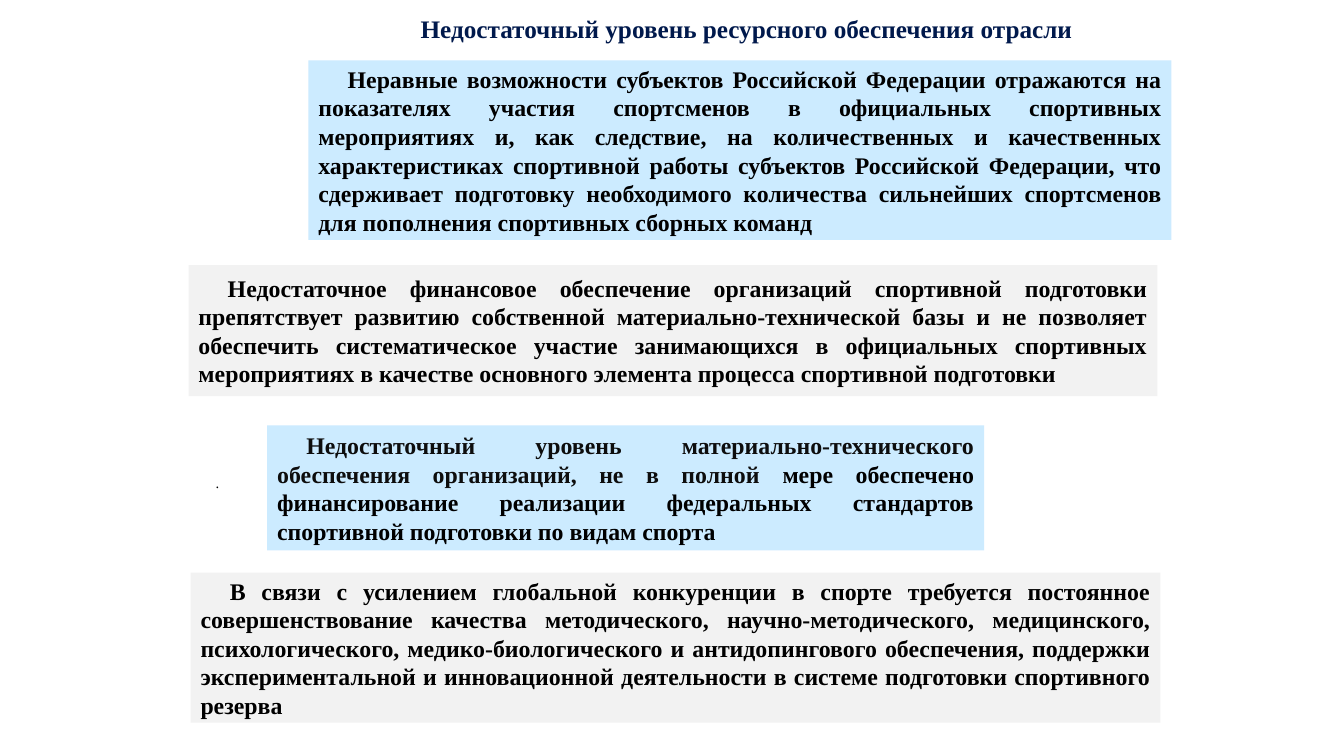
from dataclasses import dataclass

from pptx import Presentation
from pptx.dml.color import RGBColor
from pptx.enum.shapes import MSO_SHAPE as Shape
from pptx.enum.text import MSO_ANCHOR as Anchor, MSO_AUTO_SIZE as AutoSize, PP_ALIGN as Align
from pptx.util import Inches, Pt


@dataclass(frozen=True)
class Theme:
    font: str = "Times New Roman"
    navy: str = "00194C"
    black: str = "000000"
    soft_black: str = "0D0D0D"
    blue: str = "CCEBFF"
    grey: str = "F2F2F2"
    title_size: float = 18
    body_size: float = 17
    mark_size: float = 10.5


THEME = Theme()

TITLE = "Недостаточный уровень ресурсного обеспечения отрасли"
TITLE_PLACE = (3.08, -0.07, 8.65, 0.71)
MARK = "."
MARK_PLACE = (1.7, 4.66, 10, 0.25)

# Place, fill, then runs of (text, colour)
PANELS = [
    ((3.06, 0.6, 8.56, 1.78), THEME.blue, [
        ("Неравные возможности субъектов Российской Федерации отражаются на показателях "
         "участия спортсменов в официальных спортивных мероприятиях и, как следствие, на "
         "количественных и качественных характеристиках спортивной работы субъектов "
         "Российской Федерации, что сдерживает подготовку необходимого количества "
         "сильнейших спортсменов для пополнения спортивных сборных команд", THEME.black)]),
    ((1.87, 2.63, 9.61, 1.3), THEME.grey, [
        ("Недостаточное финансовое обеспечение организаций спортивной подготовки "
         "препятствует развитию собственной материально-технической базы и не позволяет "
         "обеспечить систематическое участие занимающихся в официальных спортивных "
         "мероприятиях в качестве основного элемента процесса спортивной подготовки",
         THEME.black)]),
    ((2.65, 4.22, 7.11, 1.24), THEME.blue, [
        ("Недостаточный уровень материально-технического обеспечения организаций, "
         "не в полной ", THEME.soft_black),
        ("мере обеспечено финансирование реализации федеральных стандартов спортивной "
         "подготовки по видам спорта", THEME.black)]),
    ((1.89, 5.68, 9.62, 1.49), THEME.grey, [
        ("В связи с усилением глобальной конкуренции в спорте требуется постоянное "
         "совершенствование качества методического, научно-методического, медицинского, "
         "психологического, медико-биологического и антидопингового обеспечения, поддержки "
         "экспериментальной и инновационной деятельности в системе подготовки спортивного "
         "резерва", THEME.black)]),
]


def inches(place):
    return [Inches(value) for value in place]


def write(box, runs, size, align, bold=True, margin=0.0, indent=0.0):
    """Fill the box with one vertically centred paragraph."""
    frame = box.text_frame
    frame.word_wrap = True
    frame.auto_size = AutoSize.NONE
    frame.vertical_anchor = Anchor.MIDDLE
    para = frame.paragraphs[0]
    para.alignment = align
    properties = para._p.get_or_add_pPr()
    properties.set("marL", str(Inches(margin)))
    properties.set("indent", str(Inches(indent)))
    for text, colour in runs:
        span = para.add_run()
        span.text = text
        span.font.name = THEME.font
        span.font.size = Pt(size)
        span.font.bold = bold
        span.font.color.rgb = RGBColor.from_string(colour)


def add_title(page):
    title = page.shapes.title
    title.left, title.top, title.width, title.height = inches(TITLE_PLACE)
    write(title, [(TITLE, THEME.navy)], THEME.title_size, Align.CENTER,
          margin=0.28, indent=-0.28)


def add_mark(page):
    box = page.shapes.add_textbox(*inches(MARK_PLACE))
    frame = box.text_frame
    frame.margin_left = frame.margin_right = Inches(0.07)
    frame.margin_top = frame.margin_bottom = Inches(0.04)
    write(box, [(MARK, THEME.black)], THEME.mark_size, Align.JUSTIFY,
          bold=False, indent=0.37)


def add_panel(page, place, fill, runs):
    panel = page.shapes.add_shape(Shape.RECTANGLE, *inches(place))
    panel.shadow.inherit = False
    panel.fill.solid()
    panel.fill.fore_color.rgb = RGBColor.from_string(fill)
    panel.line.fill.background()
    write(panel, runs, THEME.body_size, Align.JUSTIFY, indent=0.29)


def main():
    deck = Presentation()
    deck.slide_width, deck.slide_height = inches((13.33, 7.5))
    page = deck.slides.add_slide(deck.slide_layouts[5])
    add_title(page)
    add_mark(page)
    for place, fill, runs in PANELS:
        add_panel(page, place, fill, runs)
    deck.save("out.pptx")


if __name__ == "__main__":
    main()
